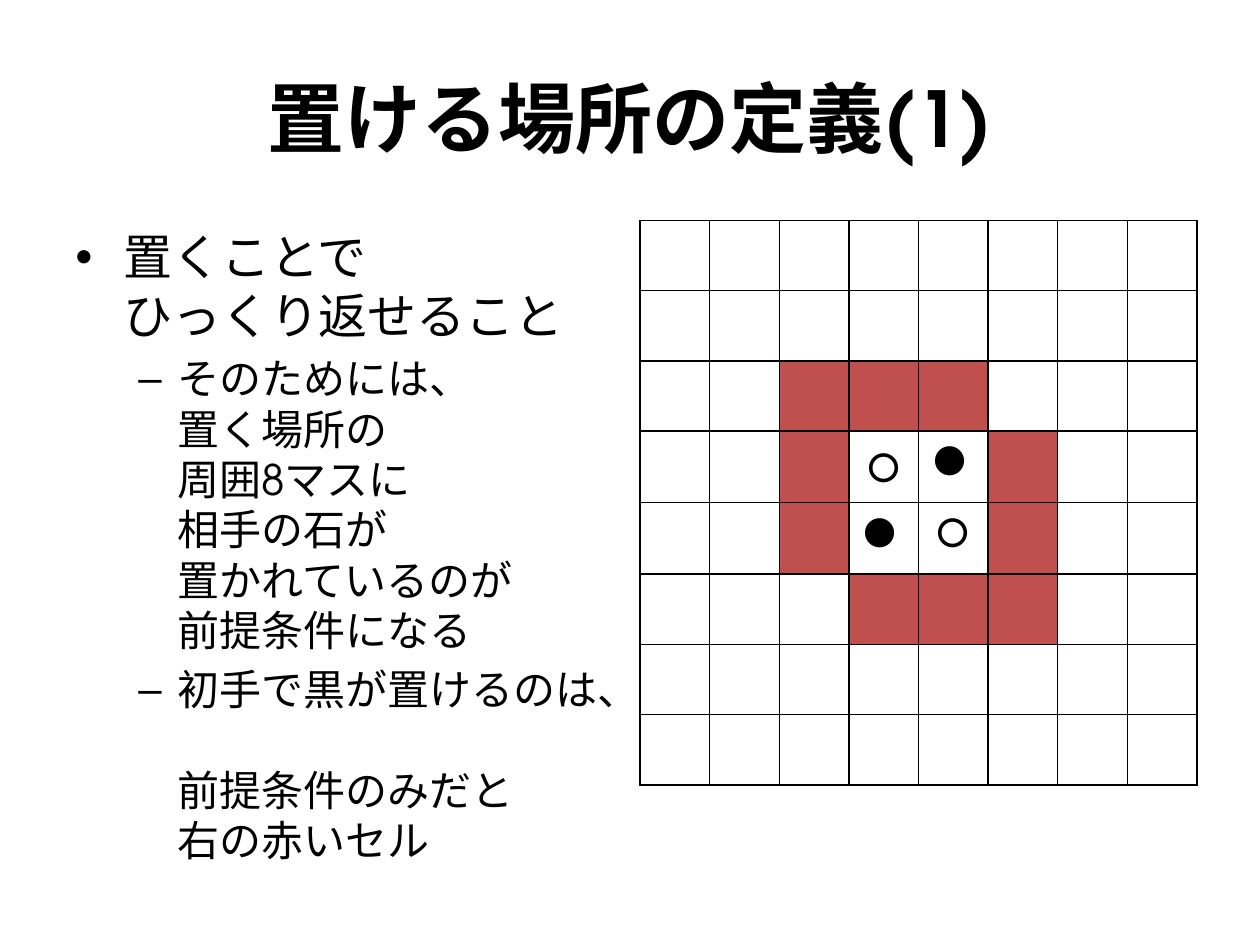
from copy import deepcopy

from lxml import etree
from pptx import Presentation
from pptx.dml.color import RGBColor
from pptx.enum.text import MSO_ANCHOR, PP_ALIGN
from pptx.oxml.ns import qn
from pptx.util import Inches, Pt

CENTER, LEFT = PP_ALIGN.CENTER, PP_ALIGN.LEFT
MIDDLE, TOP = MSO_ANCHOR.MIDDLE, MSO_ANCHOR.TOP

FONT = "TeX Gyre Adventor"
BLACK, RED = "000000", "C0504D"

TITLE = "置ける場所の定義(1)"
# level, lines
POINTS = [
    (0, ["置くことで", "ひっくり返せること"]),
    (1, ["そのためには、", "置く場所の", "周囲8マスに", "相手の石が",
         "置かれているのが", "前提条件になる"]),
    (1, ["初手で黒が置けるのは、", "前提条件のみだと", "右の赤いセル"]),
]
# bullet, size, left indent, hanging indent
LEVELS = [("•", 28, 0.38, 0.38), ("–", 24, 0.81, 0.31)]

# r marks a red cell
BOARD = [
    "........",
    "........",
    "..rrr...",
    "..r○●r..",
    "..r●○r..",
    "...rrr..",
    "........",
    "........",
]


def color(code):
    return RGBColor.from_string(code)


def assign(item, values):
    for name, value in values.items():
        setattr(item, name, value)


def write(para, text, size, bold=False, align=LEFT):
    """Fill a paragraph; a vertical tab in the text is a line break."""
    para.text = text
    para.alignment = align
    for run in para.runs:
        assign(run.font, {"name": FONT, "size": Pt(size), "bold": bold})
        run.font.color.rgb = color(BLACK)
        props = run._r.get_or_add_rPr()
        east = etree.Element(qn("a:ea"), typeface=FONT)
        props.find(qn("a:latin")).addnext(east)
    for line in para._p.findall(qn("a:br")):
        line.append(deepcopy(props))


def add_box(slide, left, top, width, height, anchor):
    box = slide.shapes.add_textbox(
        Inches(left), Inches(top), Inches(width), Inches(height))
    assign(box.text_frame, {"word_wrap": True, "vertical_anchor": anchor})
    return box.text_frame


def add_bullet(para, mark, left, hang):
    props = para._p.get_or_add_pPr()
    props.set("marL", str(Inches(left)))
    props.set("indent", str(-Inches(hang)))
    etree.SubElement(props, qn("a:buFont"), typeface="Arial")
    etree.SubElement(props, qn("a:buChar"), char=mark)


def add_points(slide):
    frame = add_box(slide, 0.5, 1.75, 4.42, 4.95, TOP)
    for index, (level, lines) in enumerate(POINTS):
        para = frame.add_paragraph() if index else frame.paragraphs[0]
        mark, size, left, hang = LEVELS[level]
        write(para, "\v".join(lines), size)
        assign(para, {"level": level, "space_before": Pt(size * 0.2)})
        add_bullet(para, mark, left, hang)


def add_border(cell):
    props = cell._tc.get_or_add_tcPr()
    for side in ("lnL", "lnR", "lnT", "lnB"):
        line = etree.SubElement(props, qn("a:" + side), w=str(Pt(1)))
        fill = etree.SubElement(line, qn("a:solidFill"))
        etree.SubElement(fill, qn("a:srgbClr"), val=BLACK)


def add_board(slide):
    count = len(BOARD)
    table = slide.shapes.add_table(
        count, count, Inches(5.08), Inches(1.75),
        Inches(4.42), Inches(4.46)).table
    assign(table, {"first_row": False, "horz_banding": False})
    for row, marks in enumerate(BOARD):
        for col, mark in enumerate(marks):
            cell = table.cell(row, col)
            add_border(cell)
            if mark == "r":
                cell.fill.solid()
                cell.fill.fore_color.rgb = color(RED)
            else:
                cell.fill.background()
            if mark in "○●":
                align = CENTER if mark == "○" else LEFT
                write(cell.text_frame.paragraphs[0], mark, 28, align=align)
    table.cell(3, 3).vertical_anchor = MIDDLE


def main():
    deck = Presentation()
    assign(deck, {"slide_width": Inches(10), "slide_height": Inches(7.5)})
    slide = deck.slides.add_slide(deck.slide_layouts[6])
    title = add_box(slide, 0.5, 0.3, 9, 1.25, MIDDLE)
    write(title.paragraphs[0], TITLE, 44, bold=True, align=CENTER)
    add_points(slide)
    add_board(slide)
    deck.save("out.pptx")


if __name__ == "__main__":
    main()
